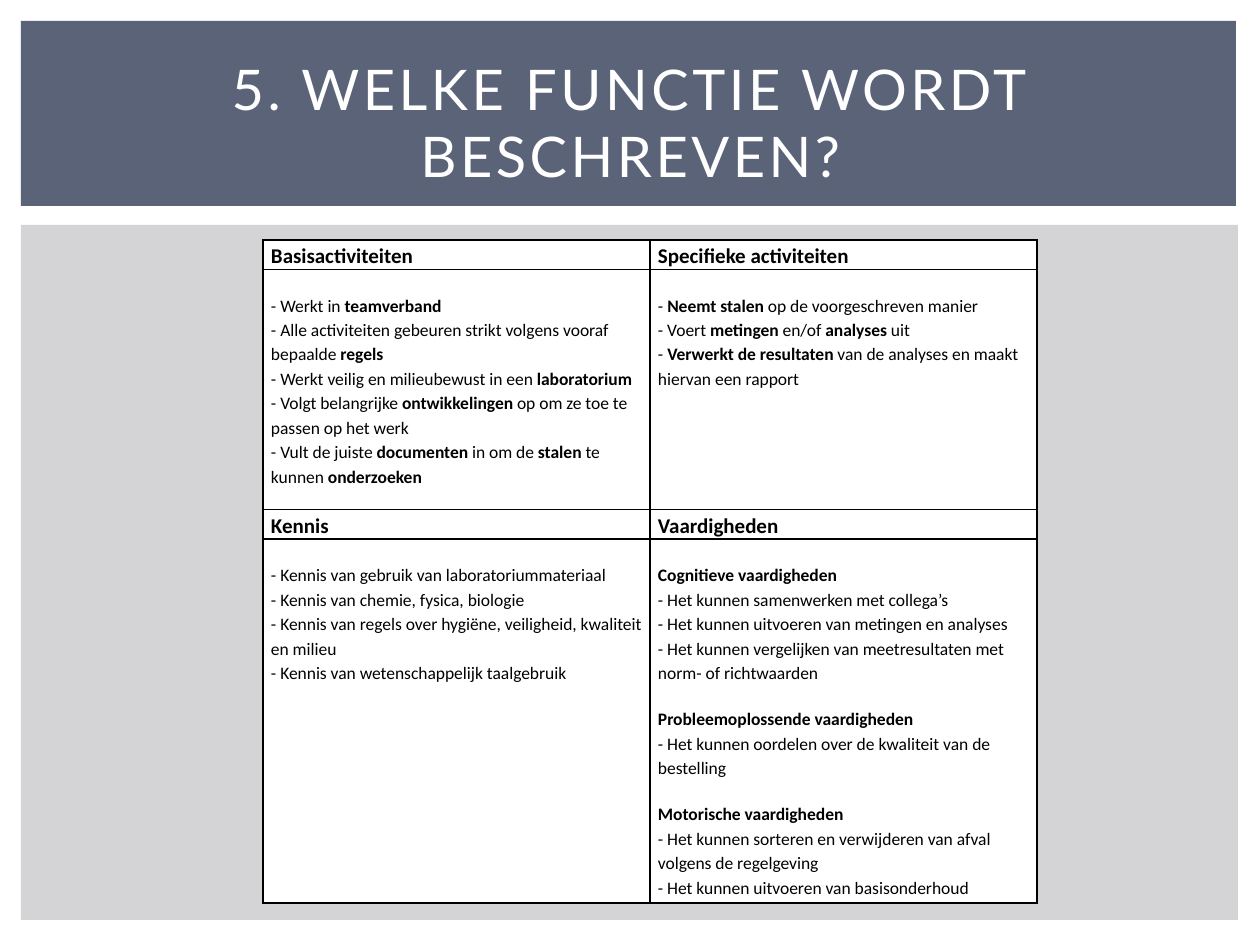
from pptx import Presentation
from pptx import util as u
from pptx.dml.color import RGBColor
from pptx.enum import shapes, text
from pptx.oxml import parse_xml
from pptx.oxml.ns import nsdecls

SCALE = 914400 / 126
INK, WHITE = "000000", "FFFFFF"
GREY, SLATE = "D4D4D6", "5A6378"

# Text marked with ** is bold; a list holds groups set apart by a gap
BASIC = [[
    "- Werkt in **teamverband**",
    "- Alle activiteiten gebeuren strikt volgens vooraf bepaalde **regels**",
    "- Werkt veilig en milieubewust in een **laboratorium**",
    "- Volgt belangrijke **ontwikkelingen** op om ze toe te passen op het werk",
    "- Vult de juiste **documenten** in om de **stalen** te kunnen **onderzoeken**",
]]
SPECIFIC = [[
    "- **Neemt stalen** op de voorgeschreven manier",
    "- Voert **metingen** en/of **analyses** uit",
    "- **Verwerkt de resultaten** van de analyses en maakt hiervan een rapport",
]]
KNOWLEDGE = [[
    "- Kennis van gebruik van laboratoriummateriaal",
    "- Kennis van chemie, fysica, biologie",
    "- Kennis van regels over hygiëne, veiligheid, kwaliteit en milieu",
    "- Kennis van wetenschappelijk taalgebruik",
]]
SKILLS = [
    ["**Cognitieve vaardigheden**",
     "- Het kunnen samenwerken met collega’s",
     "- Het kunnen uitvoeren van metingen en analyses",
     "- Het kunnen vergelijken van meetresultaten met norm- of richtwaarden"],
    ["**Probleemoplossende vaardigheden**",
     "- Het kunnen oordelen over de kwaliteit van de bestelling"],
    ["**Motorische vaardigheden**",
     "- Het kunnen sorteren en verwijderen van afval volgens de regelgeving",
     "- Het kunnen uitvoeren van basisonderhoud"],
]
# Pairs of rows: headings, contents, height and bottom margin of the contents
PARTS = [
    (("Basisactiviteiten", "Specifieke activiteiten"), (BASIC, SPECIFIC), 228, 22),
    (("Kennis", "Vaardigheden"), (KNOWLEDGE, SKILLS), 364, 0),
]
HEAD, COL, GAP = 29, 387, 23


def px(n):
    return u.Emu(round(n * SCALE))


def rgb(code):
    return RGBColor.from_string(code)


def add_panel(slide, x, y, w, h, color):
    panel = slide.shapes.add_shape(
        shapes.MSO_SHAPE.RECTANGLE, px(x), px(y), px(w), px(h))
    panel.shadow.inherit = False
    panel.fill.solid()
    panel.fill.fore_color.rgb = rgb(color)
    panel.line.fill.background()


def add_run(para, words, size, color, face, bold=False):
    run = para.add_run()
    run.text = words
    font = run.font
    font.size, font.name, font.bold = u.Pt(size), face, bold
    font.color.rgb = rgb(color)
    return run


def set_title(slide, words):
    title = slide.shapes.title
    title.left, title.top, title.width, title.height = map(px, (53, 49, 1155, 145))
    frame = title.text_frame
    frame.word_wrap = True
    frame.vertical_anchor = text.MSO_ANCHOR.MIDDLE
    para = frame.paragraphs[0]
    para.alignment = text.PP_ALIGN.CENTER
    run = add_run(para, words, 32, WHITE, "Lato")
    run.font._element.set("spc", "200")
    slide.shapes._spTree.append(title._element)  # in front of the panels


def set_cell(cell, top=0, bottom=0):
    cell.margin_left = cell.margin_right = px(8)
    cell.margin_top, cell.margin_bottom = px(top), px(bottom)
    props = cell._tc.get_or_add_tcPr()
    for side in ("lnL", "lnR", "lnT", "lnB"):
        props.append(parse_xml(
            f'<a:{side} {nsdecls("a")} w="12700"><a:solidFill>'
            f'<a:srgbClr val="{INK}"/></a:solidFill></a:{side}>'))
    cell.fill.solid()
    cell.fill.fore_color.rgb = rgb(WHITE)


def add_line(frame, line, size, first, before=0):
    para = frame.paragraphs[0] if first else frame.add_paragraph()
    para.line_spacing = 1.15
    para.space_before = u.Pt(before)
    for i, part in enumerate(line.split("**")):
        if part:
            add_run(para, part, size, INK, "Calibri", i % 2 == 1)
    return para


def fill_head(cell, words):
    set_cell(cell)
    add_line(cell.text_frame, f"**{words}**", 12, True).space_after = u.Pt(10)


def fill_body(cell, groups, bottom):
    set_cell(cell, GAP, bottom)
    for g, group in enumerate(groups):
        for i, line in enumerate(group):
            before = 12.5 if g and not i else 0
            add_line(cell.text_frame, line, 10, not (g or i), before)


def add_grid(slide):
    high = sum(HEAD + part[2] for part in PARTS)
    grid = slide.shapes.add_table(
        2 * len(PARTS), 2, px(263), px(240), px(2 * COL), px(high)).table
    for col in grid.columns:
        col.width = px(COL)
    for n, (heads, bodies, height, bottom) in enumerate(PARTS):
        grid.rows[2 * n].height = px(HEAD)
        grid.rows[2 * n + 1].height = px(height)
        for c in range(2):
            fill_head(grid.cell(2 * n, c), heads[c])
            fill_body(grid.cell(2 * n + 1, c), bodies[c], bottom)


def main():
    deck = Presentation()
    deck.slide_width, deck.slide_height = px(1260), px(945)
    slide = deck.slides.add_slide(deck.slide_layouts[5])
    # Panels and title
    add_panel(slide, 21, 225, 1217, 695, GREY)
    add_panel(slide, 21, 21, 1215, 185, SLATE)
    set_title(slide, "5. WELKE FUNCTIE WORDT BESCHREVEN?")
    # Job profile
    add_grid(slide)
    deck.save("out.pptx")


if __name__ == "__main__":
    main()
